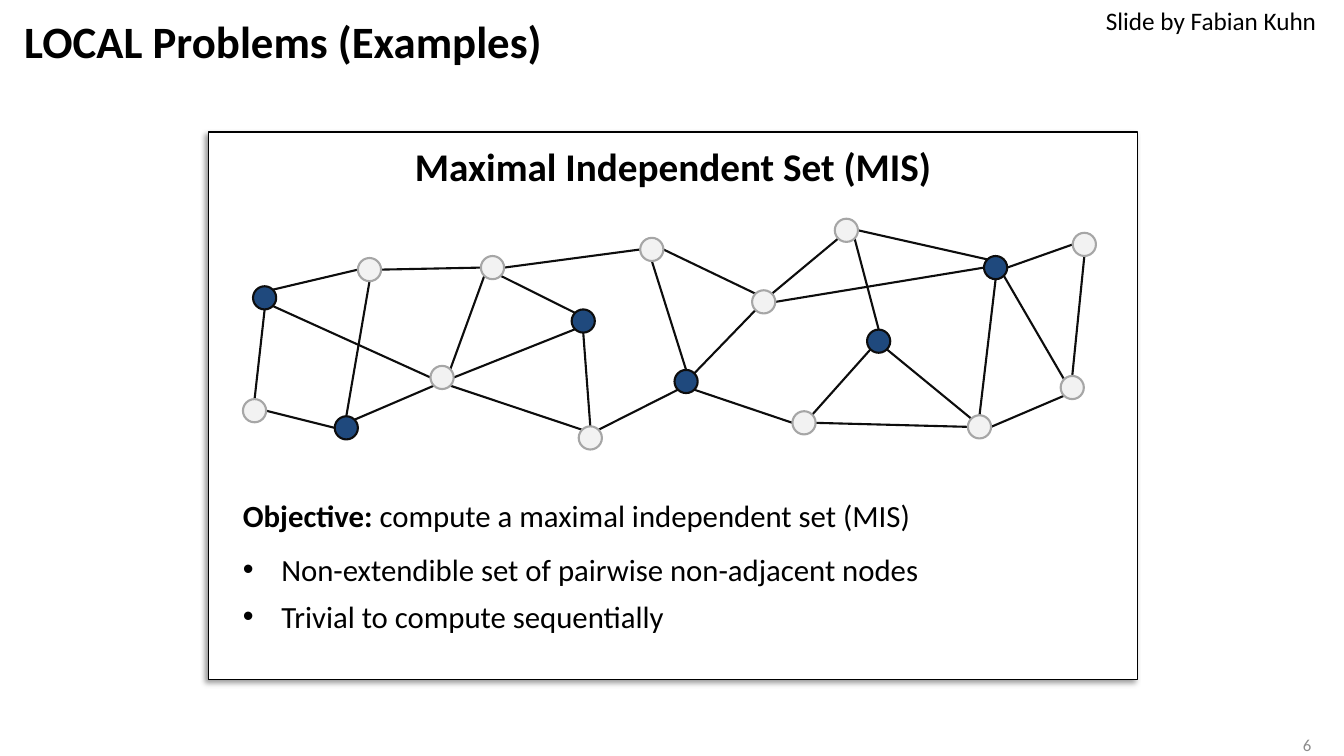
from lxml.etree import SubElement
from pptx import Presentation
from pptx.dml.color import RGBColor
from pptx.enum.shapes import MSO_CONNECTOR as Connector, MSO_SHAPE as Shape
from pptx.enum.text import MSO_ANCHOR as Anchor, MSO_AUTO_SIZE as AutoSize, PP_ALIGN as Align
from pptx.oxml import parse_xml
from pptx.oxml.ns import nsdecls, qn
from pptx.util import Inches, Pt

COLUMNS, ROWS = 133.3, 75
CELL = Inches(0.1)
NODE_SIZE = 2.3
INDENT = 3.8

TITLE = "LOCAL Problems (Examples)"
CREDIT = "Slide by Fabian Kuhn"
PAGE_NUMBER = "6"
HEADING = "Maximal Independent Set (MIS)"
OBJECTIVE = [("Objective: ", True), ("compute a maximal independent set (MIS)", False)]
BULLETS = [
    ("Non-extendible set of pairwise non-adjacent nodes", 12),
    ("Trivial to compute sequentially", 7),
]

AREAS = {
    "title": (1.4, 0.6, 120.7, 7.6),
    "panel": (20.7, 13.1, 92.1, 54.3),
    "body": (23.1, 48.8, 69.7, 14.8),
    "credit": (108.7, 0, 23.1, 4),
    "number": (126, 72.7, 7.3, 2.3),
}

NODES = {
    "a": (25.1, 28.4), "b": (24.1, 39.6), "c": (35.5, 25.6),
    "d": (33.2, 41.3), "e": (42.7, 36.3), "f": (47.7, 25.4),
    "g": (56.7, 30.7), "h": (57.4, 42.3), "i": (63.5, 23.6),
    "j": (66.9, 36.7), "k": (74.6, 28.8), "l": (78.6, 40.8),
    "m": (82.8, 21.7), "n": (86, 32.7), "o": (96, 41.2),
    "p": (97.6, 25.4), "q": (105.2, 37.3), "r": (106.4, 23.1),
}
INDEPENDENT = "adgjnp"

EDGES = [
    ("a", "NE", "c", "W"), ("a", "S", "b", "N"), ("a", "SE", "e", "W"),
    ("b", "E", "d", "W"), ("c", "S", "d", "N"), ("c", "E", "f", "W"),
    ("d", "NE", "e", "SW"), ("e", "NE", "f", "SW"), ("e", "E", "g", "SW"),
    ("e", "SE", "h", "NW"), ("f", "SE", "g", "NW"), ("f", "E", "i", "W"),
    ("g", "S", "h", "N"), ("h", "NE", "j", "SW"), ("i", "S", "j", "N"),
    ("i", "E", "k", "NW"), ("j", "NE", "k", "SW"), ("j", "SE", "l", "W"),
    ("k", "NE", "m", "SW"), ("k", "E", "p", "W"), ("l", "NE", "n", "SW"),
    ("l", "E", "o", "W"), ("m", "SE", "n", "N"), ("m", "E", "p", "NW"),
    ("n", "SE", "o", "NW"), ("o", "N", "p", "S"), ("o", "E", "q", "SW"),
    ("p", "SE", "q", "NW"), ("p", "E", "r", "W"), ("q", "N", "r", "S"),
]
DIAGONAL = 0.5 ** 0.5
SHADOW = (
    f'<a:effectLst {nsdecls("a")}><a:outerShdw blurRad="50800" dist="38100" dir="8100000">'
    '<a:srgbClr val="000000"><a:alpha val="40000"/></a:srgbClr></a:outerShdw></a:effectLst>'
)


def color(code):
    return RGBColor.from_string(code)


def cells(*lengths):
    return [round(length * CELL) for length in lengths]


def add_text(para, text, size=22, bold=False, code="000000", align=Align.LEFT):
    span = para.add_run()
    span.text = text
    span.font.name, span.font.size, span.font.bold = "Calibri", Pt(size), bold
    span.font.color.rgb = color(code)
    para.alignment = align


def place(box, area):
    box.left, box.top, box.width, box.height = cells(*AREAS[area])


def add_label(page, area, text, wrap=False, anchor=Anchor.TOP, **style):
    box = page.shapes.add_textbox(*cells(*AREAS[area]))
    frame = box.text_frame
    frame.word_wrap, frame.vertical_anchor = wrap, anchor
    add_text(frame.paragraphs[0], text, **style)


def add_outlined(page, kind, area, fill, line, width):
    shape = page.shapes.add_shape(kind, *cells(*area))
    shape.shadow.inherit = False
    shape.fill.solid()
    shape.fill.fore_color.rgb = color(fill)
    shape.line.color.rgb = color(line)
    shape.line.width = Pt(width)
    return shape


def rim(node, side):
    left, top = NODES[node]
    radius = NODE_SIZE / 2
    reach = radius * (DIAGONAL if len(side) == 2 else 1)
    across = ("E" in side) - ("W" in side)
    down = ("S" in side) - ("N" in side)
    return cells(left + radius + across * reach, top + radius + down * reach)


def add_edge(page, start, start_side, end, end_side):
    edge = page.shapes.add_connector(
        Connector.STRAIGHT, *rim(start, start_side), *rim(end, end_side))
    edge.line.color.rgb = color("0D0D0D")
    edge.line.width = Pt(1.5)
    SubElement(edge._element.spPr, qn("a:effectLst"))


def set_bullet(para, indent=0, sign=None):
    properties = para._p.get_or_add_pPr()
    properties.set("marL", str(indent))
    properties.set("indent", str(-indent))
    if sign:
        SubElement(properties, qn("a:buFont"), typeface="Arial")
        SubElement(properties, qn("a:buChar"), char=sign)
    else:
        SubElement(properties, qn("a:buNone"))


def add_panel(page):
    panel = add_outlined(page, Shape.RECTANGLE, AREAS["panel"], "FFFFFF", "000000", 1)
    properties = panel._element.spPr
    properties.replace(properties.find(qn("a:effectLst")), parse_xml(SHADOW))
    frame = panel.text_frame
    frame.vertical_anchor = Anchor.TOP
    frame.margin_left = frame.margin_right = frame.margin_top = frame.margin_bottom = CELL
    add_text(frame.paragraphs[0], HEADING, size=28, bold=True, align=Align.CENTER)
    page.shapes._spTree.insert(2, panel._element)


def fill_title(title):
    place(title, "title")
    frame = title.text_frame
    frame.vertical_anchor, frame.auto_size = Anchor.MIDDLE, AutoSize.NONE
    frame.paragraphs[0].line_spacing = 0.9
    add_text(frame.paragraphs[0], TITLE, size=32, bold=True)


def fill_body(body):
    place(body, "body")
    frame = body.text_frame
    frame.word_wrap, frame.auto_size = False, AutoSize.NONE
    frame.vertical_anchor = Anchor.TOP
    para = frame.paragraphs[0]
    para.space_before = Pt(0)
    set_bullet(para)
    for text, bold in OBJECTIVE:
        add_text(para, text, bold=bold)
    for text, gap in BULLETS:
        para = frame.add_paragraph()
        para.space_before = Pt(gap)
        set_bullet(para, round(INDENT * CELL), "•")
        add_text(para, text)


def main():
    deck = Presentation()
    deck.slide_width, deck.slide_height = cells(COLUMNS, ROWS)
    page = deck.slides.add_slide(deck.slide_layouts[1])
    add_panel(page)
    fill_title(page.shapes.title)
    fill_body(page.placeholders[1])
    for edge in EDGES:
        add_edge(page, *edge)
    for name, corner in NODES.items():
        fill, line = ("1F497D", "0D0D0D") if name in INDEPENDENT else ("F2F2F2", "A6A6A6")
        add_outlined(page, Shape.OVAL, (*corner, NODE_SIZE, NODE_SIZE), fill, line, 1.5)
    add_label(page, "credit", CREDIT, size=18)
    add_label(page, "number", PAGE_NUMBER, wrap=True, anchor=Anchor.MIDDLE,
              size=12, code="8C8C8C", align=Align.CENTER)
    deck.save("out.pptx")


if __name__ == "__main__":
    main()
